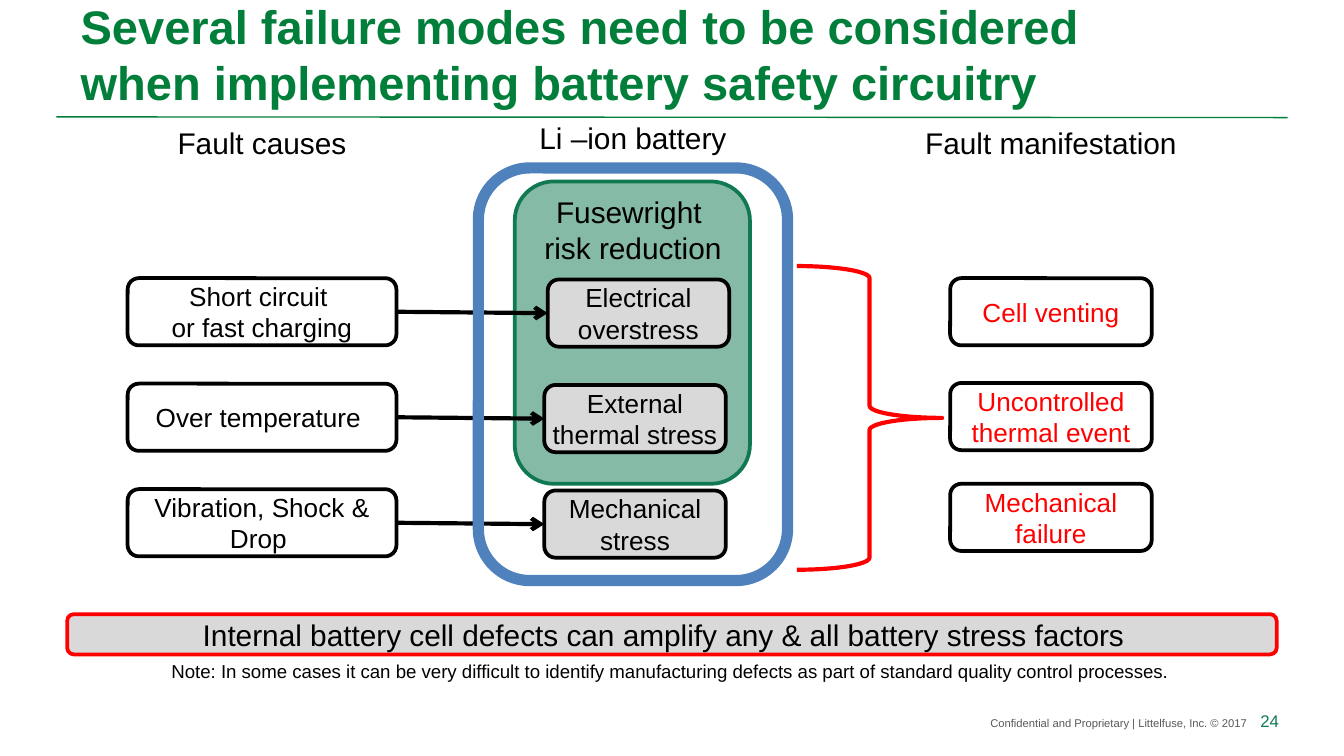
"""Build the battery failure modes slide."""
from pptx import Presentation, util as u
from pptx.dml.color import RGBColor
from pptx.enum import shapes, text
from pptx.oxml.ns import qn
from lxml import etree

PX = 4572
COLORS = {"title": "007E3A", "green": "107952", "black": "000000", "red": "FF0000",
          "grey": "D9D9D9", "blue": "4F81BD", "footer": "595959"}
CENTER, LEFT, RIGHT = text.PP_ALIGN.CENTER, text.PP_ALIGN.LEFT, text.PP_ALIGN.RIGHT
MIDDLE, TOP = text.MSO_ANCHOR.MIDDLE, text.MSO_ANCHOR.TOP
ROUND, STRAIGHT = shapes.MSO_SHAPE.ROUNDED_RECTANGLE, shapes.MSO_CONNECTOR.STRAIGHT


def write(box, lines, size, color, align=CENTER, anchor=MIDDLE, sides=(20, 20), bold=False):
    """Fill a box with one paragraph, one run per line."""
    frame = box.text_frame
    frame.word_wrap = True
    frame.auto_size = text.MSO_AUTO_SIZE.NONE
    frame.vertical_anchor = anchor
    frame.margin_left, frame.margin_right = (side * PX for side in sides)
    para = frame.paragraphs[0]
    para.alignment = align
    for index, line in enumerate(lines):
        if index:
            para.add_line_break()
        span = para.add_run()
        span.text = line
        span.font.name = "Arial"
        span.font.size = u.Pt(size)
        span.font.bold = bold
        span.font.color.rgb = RGBColor.from_string(COLORS[color])


def outline(kind, place, line, width, fill=None):
    """Add a preset shape with an outline and an optional fill."""
    shape = page.shapes.add_shape(kind, *(value * PX for value in place))
    shape.shadow.inherit = False
    shape.line.color.rgb = RGBColor.from_string(COLORS[line])
    shape.line.width = u.Pt(width)
    if fill:
        shape.fill.solid()
        shape.fill.fore_color.rgb = RGBColor.from_string(COLORS[fill])
    else:
        shape.fill.background()
    return shape


deck = Presentation()
deck.slide_width, deck.slide_height = 2000 * PX, 1125 * PX
page = deck.slides.add_slide(deck.slide_layouts[5])

title = page.shapes.title
title.left, title.top, title.width, title.height = 100 * PX, 14 * PX, 1800 * PX, 150 * PX
write(title, ["Several failure modes need to be considered ",
              "when implementing battery safety circuitry"],
      25.2, "title", LEFT, text.MSO_ANCHOR.BOTTOM, bold=True)
title.text_frame.margin_top = title.text_frame.margin_bottom = 0
title.text_frame.paragraphs[0].line_spacing = u.Pt(30)

rule = page.shapes.add_connector(STRAIGHT, 84 * PX, 174 * PX, 1916 * PX, 175 * PX)
rule.line.color.rgb = RGBColor.from_string(COLORS["title"])
rule.line.width = u.Pt(0.75)
etree.SubElement(rule._element.spPr, qn("a:effectLst"))

protection = outline(ROUND, (766, 270, 350, 450), "green", 2, "green")
fill_color = protection._element.spPr.find(qn("a:solidFill"))[0]
etree.SubElement(fill_color, qn("a:alpha")).set("val", "51000")

fault_rows = [
    (414, 815, ["Short circuit ", "or fast charging"], "Electrical overstress"),
    (571, 810, ["Over temperature "], "External thermal stress"),
    (728, 810, ["Vibration, Shock & Drop "], "Mechanical stress"),
]
for top, stress_left, cause_lines, stress_text in fault_rows:
    cause = outline(ROUND, (190, top, 400, 100), "black", 2)
    write(cause, cause_lines, 14, "black")
    stress = outline(ROUND, (stress_left, top + 2, 270, 100), "black", 2, "grey")
    write(stress, [stress_text], 14, "black", sides=(0, 0))
    arrow = page.shapes.add_connector(STRAIGHT, 0, 0, 0, 0)
    arrow.begin_connect(cause, 3)
    arrow.end_connect(stress, 1)
    arrow.line.color.rgb = RGBColor.from_string(COLORS["black"])
    arrow.line.width = u.Pt(2.25)
    arrow_line = arrow._element.spPr.find(qn("a:ln"))
    etree.SubElement(arrow_line, qn("a:tailEnd")).set("type", "arrow")
    etree.SubElement(arrow._element.spPr, qn("a:effectLst"))

for top, effect in [(414, "Cell venting"), (570, "Uncontrolled thermal event"),
                    (720, "Mechanical failure")]:
    write(outline(ROUND, (1414, top, 300, 100), "black", 2), [effect], 14, "red")

summary = outline(ROUND, (100, 914, 1800, 60), "red", 2, "grey")
write(summary, ["Internal battery cell defects can amplify any & all battery stress factors"],
      16, "black", sides=(0, 24))

labels = [
    ((140, 182, 500, 60), ["Fault causes"], 16, "black", CENTER, MIDDLE),
    ((692, 175, 500, 60), ["Li –ion battery"], 16, "black", CENTER, MIDDLE),
    ((1314, 182, 500, 60), ["Fault manifestation"], 16, "black", CENTER, MIDDLE),
    ((767, 278, 350, 100), ["Fusewright ", "risk reduction"], 16, "black", CENTER, TOP),
    ((100, 972, 1800, 54), ["Note: In some cases it can be very difficult to identify manufacturing "
                            "defects as part of standard quality control processes. "],
     10, "black", CENTER, TOP),
    ((1380, 1056, 495, 40), ["Confidential and Proprietary | Littelfuse, Inc. © 2017"],
     6, "footer", RIGHT, TOP),
    ((1856, 1048, 72, 50), ["24"], 9, "green", LEFT, TOP),
]
for place, lines, size, color, align, anchor in labels:
    label = page.shapes.add_textbox(*(value * PX for value in place))
    write(label, lines, size, color, align, anchor)

outline(shapes.MSO_SHAPE.RIGHT_BRACE, (1186, 396, 216, 452), "red", 2.25)
outline(ROUND, (712, 250, 460, 614), "blue", 6)

deck.save("out.pptx")
